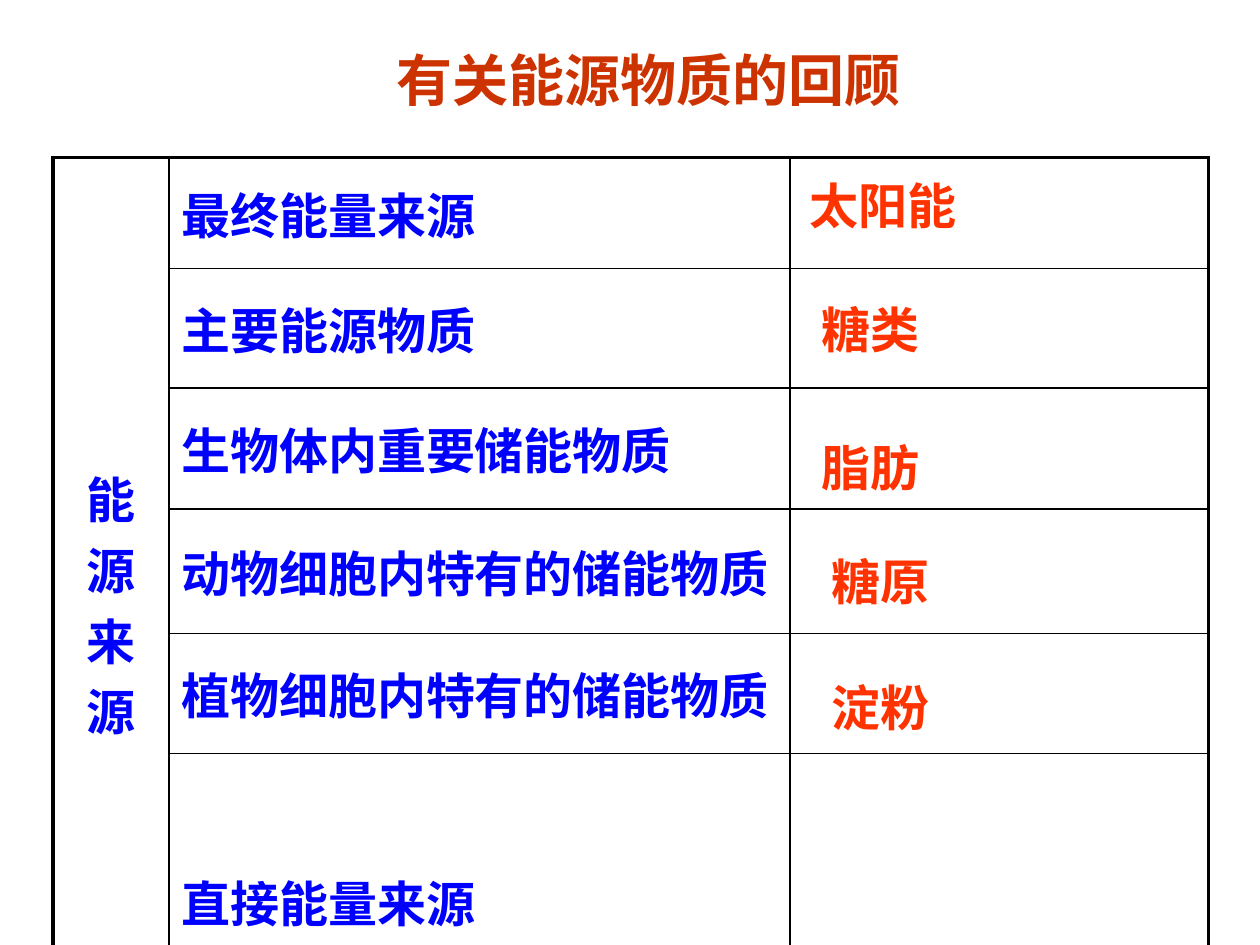
"""Build a review slide with a table of energy substances and their answers."""
from typing import NamedTuple

from lxml.etree import SubElement
from pptx import Presentation
from pptx.dml.color import RGBColor
from pptx.enum.text import MSO_ANCHOR, MSO_AUTO_SIZE, PP_ALIGN
from pptx.oxml.ns import qn
from pptx.util import Inches, Pt

FONT = "Noto Sans CJK SC"
BLUE = RGBColor(0x00, 0x00, 0xFF)
ORANGE = RGBColor(0xFF, 0x33, 0x00)
RUST = RGBColor(0xCC, 0x33, 0x00)
BLACK = RGBColor(0x00, 0x00, 0x00)
THIN, THICK = 1, 2.25


class Answer(NamedTuple):
    text: str
    left: float
    top: float
    width: float


class Row(NamedTuple):
    label: str
    height: float


COLUMNS = (0.92, 4.93, 3.32)
ROWS = (
    Row("最终能量来源", 0.88),
    Row("主要能源物质", 0.95),
    Row("生物体内重要储能物质", 0.96),
    Row("动物细胞内特有的储能物质", 0.99),
    Row("植物细胞内特有的储能物质", 0.95),
    Row("直接能量来源", 1.13),
)
ANSWERS = (
    Answer("太阳能", 6.33, 1.34, 2.11),
    Answer("糖类", 6.42, 2.33, 2.33),
    Answer("脂肪", 6.42, 3.42, 2.33),
    Answer("糖原", 6.5, 4.33, 2.42),
    Answer("淀粉", 6.5, 5.33, 2.67),
)


def write(frame, text: str, *, color: RGBColor, size: float = 28,
          align: PP_ALIGN = PP_ALIGN.LEFT) -> None:
    """Write one bold paragraph in the slide font."""
    para = frame.paragraphs[0]
    para.alignment = align
    span = para.add_run()
    span.text = text
    span.font.size = Pt(size)
    span.font.bold = True
    span.font.color.rgb = color
    span.font.name = FONT
    SubElement(span.font._element, qn("a:ea"), typeface=FONT)


def set_borders(cell, **widths: float) -> None:
    """Draw solid black cell borders with widths in points."""
    properties = cell._tc.get_or_add_tcPr()
    for side in ("L", "R", "T", "B"):
        line = SubElement(properties, qn(f"a:ln{side}"), w=str(Pt(widths[side])))
        fill = SubElement(line, qn("a:solidFill"))
        SubElement(fill, qn("a:srgbClr"), val=str(BLACK))


def add_title(page, text: str) -> None:
    """Place and format the title placeholder."""
    title = page.shapes.title
    title.left, title.top = Inches(1.86), Inches(0.25)
    title.width, title.height = Inches(6.58), Inches(0.75)
    title.text_frame.vertical_anchor = MSO_ANCHOR.MIDDLE
    write(title.text_frame, text, color=RUST, size=32, align=PP_ALIGN.CENTER)


def add_energy_table(page) -> None:
    """Add the table with a merged heading column and an empty answer column."""
    height = sum(row.height for row in ROWS)
    last_row, last_column = len(ROWS) - 1, len(COLUMNS) - 1
    table = page.shapes.add_table(
        len(ROWS), len(COLUMNS), Inches(0.42), Inches(1.25),
        Inches(sum(COLUMNS)), Inches(height)).table
    table.first_row = table.horz_banding = False
    for column, width in zip(table.columns, COLUMNS):
        column.width = Inches(width)
    heading = table.cell(0, 0)
    heading.merge(table.cell(last_row, 0))
    write(heading.text_frame, "能源来源", color=BLUE, align=PP_ALIGN.CENTER)
    for i, row in enumerate(ROWS):
        table.rows[i].height = Inches(row.height)
        write(table.cell(i, 1).text_frame, row.label, color=BLUE)
        for j in range(len(COLUMNS)):
            cell = table.cell(i, j)
            if not cell.is_spanned:
                set_borders(
                    cell,
                    L=THICK if j == 0 else THIN,
                    R=THICK if j == last_column else THIN,
                    T=THICK if i == 0 else THIN,
                    B=THICK if i == last_row or cell.is_merge_origin else THIN)
            cell.fill.background()
            cell.vertical_anchor = MSO_ANCHOR.MIDDLE


def add_answer(page, answer: Answer) -> None:
    """Lay an answer over the last table column."""
    box = page.shapes.add_textbox(
        Inches(answer.left), Inches(answer.top), Inches(answer.width), Inches(0.57))
    box.text_frame.word_wrap = True
    box.text_frame.auto_size = MSO_AUTO_SIZE.SHAPE_TO_FIT_TEXT
    write(box.text_frame, answer.text, color=ORANGE)


def main() -> None:
    """Build and save the deck."""
    deck = Presentation()
    deck.slide_width, deck.slide_height = Inches(10), Inches(7.5)
    page = deck.slides.add_slide(deck.slide_layouts[5])
    add_title(page, "有关能源物质的回顾")
    add_energy_table(page)
    for answer in ANSWERS:
        add_answer(page, answer)
    deck.save("out.pptx")


if __name__ == "__main__":
    main()
